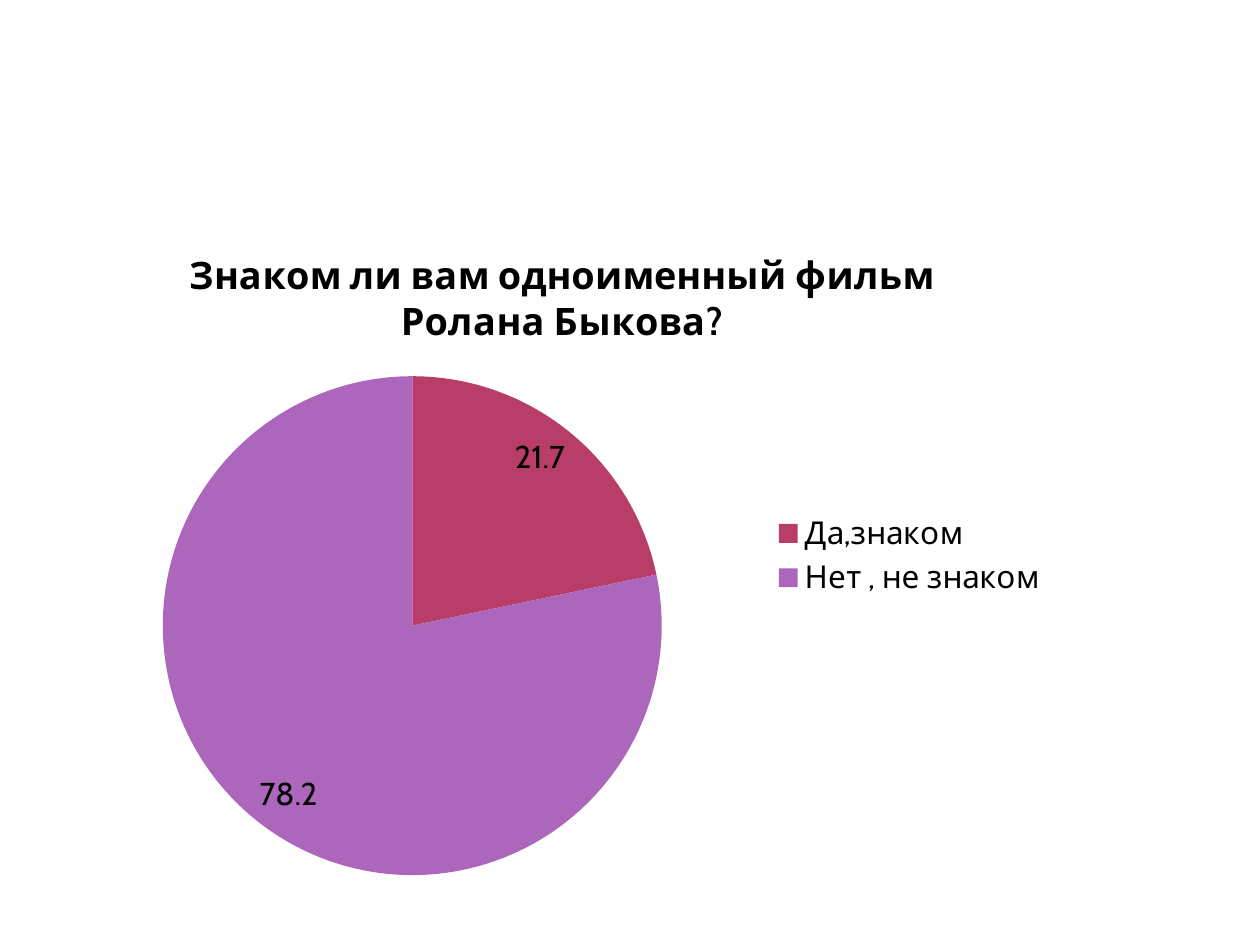
from lxml.etree import SubElement
from pptx import Presentation
from pptx.chart.data import CategoryChartData as Data
from pptx.dml.color import RGBColor
from pptx.enum.chart import XL_CHART_TYPE as Kind
from pptx.enum.chart import XL_LABEL_POSITION as Spot
from pptx.enum.chart import XL_LEGEND_POSITION as Side
from pptx.oxml.ns import qn
from pptx.util import Inches, Pt

# Content
TITLE = "Знаком ли вам одноименный фильм Ролана Быкова?"
SLICES = [
    ("Да,знаком", 21.7, "B83D68"),
    ("Нет , не знаком", 78.2, "AC66BB"),
]
BOX = (0.5, 1.76, 7.92, 5.3)
# Plot area as shares of the chart box
PLOT = {"x": 0.1, "y": 0.23, "w": 0.5, "h": 0.75}
TEXT = {"name": "Cabin", "size": Pt(18), "bold": False}
HEAD = {"name": "Cabin", "size": Pt(21.6), "bold": True}


def tint(color):
    return RGBColor.from_string(color)


def style(font, form):
    for key, value in form.items():
        setattr(font, key, value)
    font.color.rgb = tint("000000")


def place(plot):
    """Fix the inner plot area within the chart."""
    area = plot._element.getparent()
    layout = area.find(qn("c:layout"))
    if layout is None:
        layout = SubElement(area, qn("c:layout"))
        area.insert(0, layout)
    manual = SubElement(layout, qn("c:manualLayout"))
    marks = {"layoutTarget": "inner", "xMode": "edge", "yMode": "edge", **PLOT}
    for tag, value in marks.items():
        SubElement(manual, qn(f"c:{tag}")).set("val", str(value))


def main():
    deck = Presentation()
    deck.slide_width, deck.slide_height = Inches(10), Inches(7.5)
    slide = deck.slides.add_slide(deck.slide_layouts[6])

    # Pie chart
    names, values, colors = zip(*SLICES)
    data = Data()
    data.categories = names
    data.add_series("Series 1", values)
    frame = slide.shapes.add_chart(Kind.PIE, *map(Inches, BOX), data)
    chart = frame.chart
    style(chart.font, TEXT)

    # Title
    chart.has_title = True
    line = chart.chart_title.text_frame.paragraphs[0]
    run = line.add_run()
    run.text = TITLE
    style(run.font, HEAD)
    chart.chart_title.include_in_layout = False

    # Legend
    chart.has_legend = True
    chart.legend.position = Side.RIGHT
    chart.legend.include_in_layout = False
    style(chart.legend.font, TEXT)

    # Slices and labels
    pie = chart.plots[0]
    pie.vary_by_categories = True
    place(pie)
    for i, color in enumerate(colors):
        fill = pie.series[0].points[i].format.fill
        fill.solid()
        fill.fore_color.rgb = tint(color)
    pie.has_data_labels = True
    labels = pie.data_labels
    labels.show_value = True
    labels.show_percentage = False
    labels.position = Spot.INSIDE_END
    style(labels.font, TEXT)

    deck.save("out.pptx")


if __name__ == "__main__":
    main()
